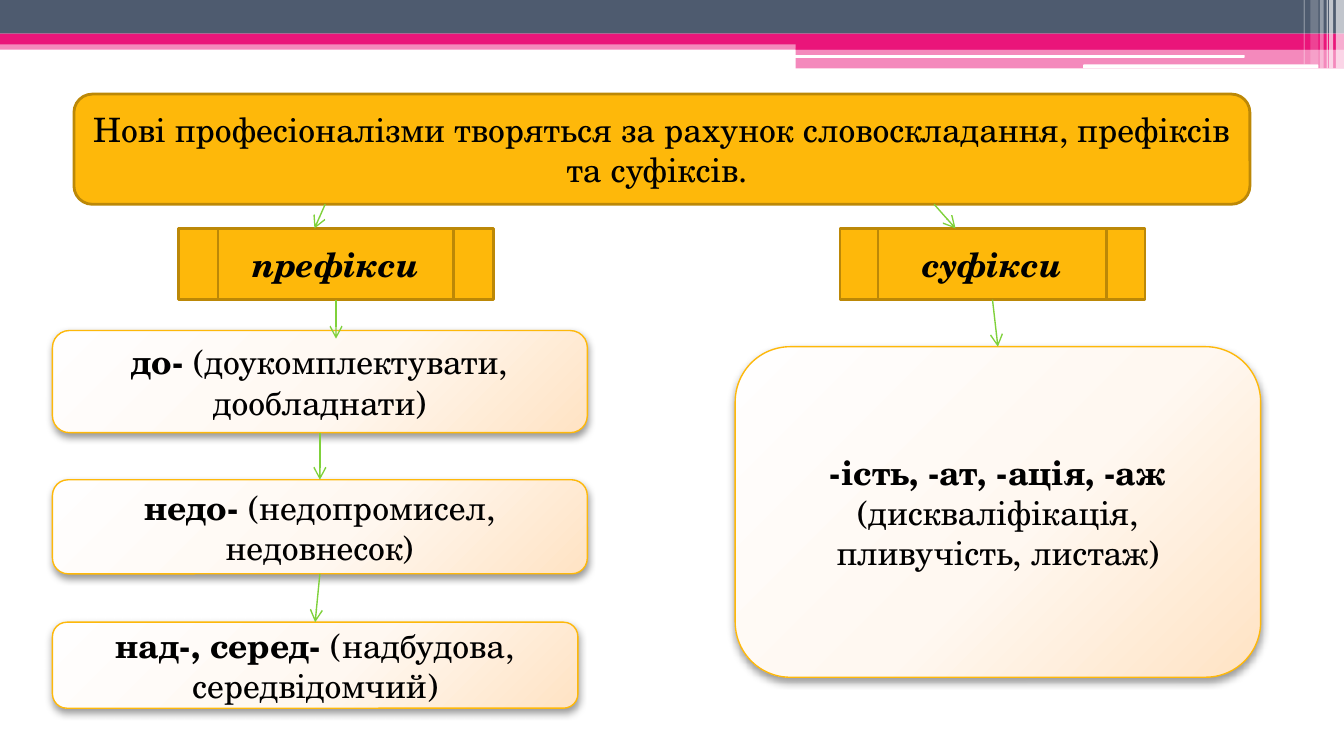
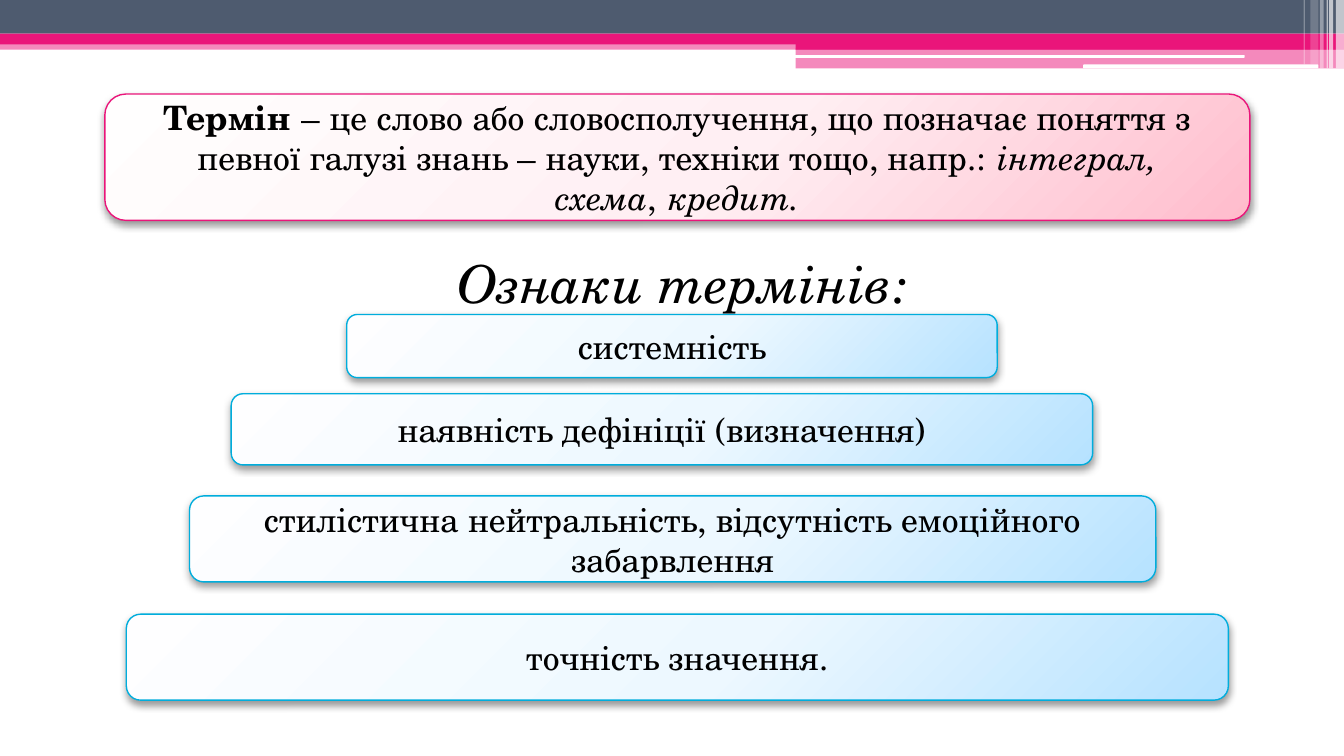
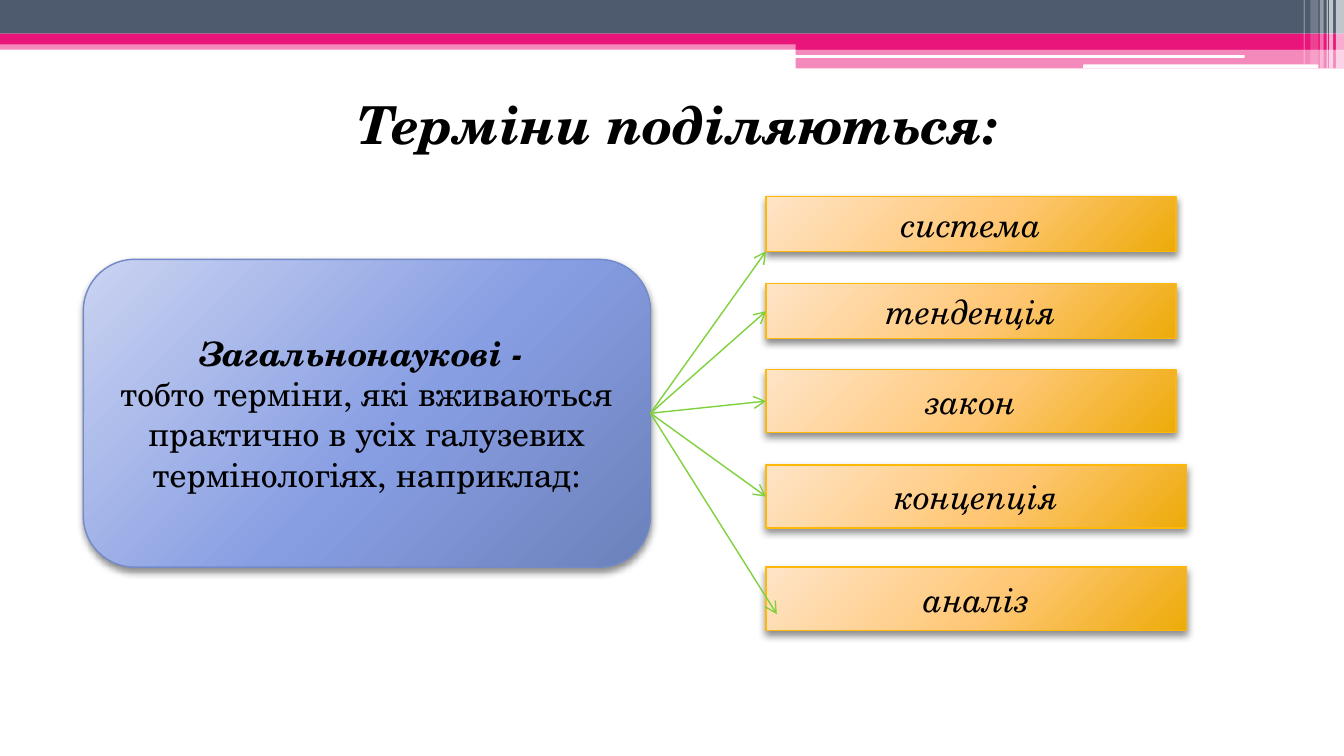
"""Build three slides on professional words and terms."""
from dataclasses import dataclass

from lxml.etree import SubElement
from pptx import Presentation
from pptx.dml.color import RGBColor
from pptx.enum.shapes import MSO_CONNECTOR, MSO_SHAPE
from pptx.enum.text import MSO_ANCHOR, MSO_AUTO_SIZE, PP_ALIGN
from pptx.oxml import parse_xml
from pptx.oxml.ns import nsdecls, qn
from pptx.util import Inches, Pt


@dataclass(frozen=True)
class Tone:
    """Fill stops, edge and shadow of one kind of box."""
    stops: tuple
    edge: str
    width: float = 0.75
    shade: int = 40
    blur: float = 4.1


@dataclass(frozen=True)
class Theme:
    """Colours, tones and type sizes of the deck."""
    font: str = "TeX Gyre Schola"
    body: int = 18
    head: int = 28
    ink: str = "000000"
    slate: str = "4E5B6F"
    pink: str = "EA157A"
    white: str = "FFFFFF"
    arrow: str = "7FD13B"
    thin: float = 0.75
    gold: Tone = Tone(("FEB80A",), "BC8807", 1.5, 0)
    cream: Tone = Tone(("FFFEFE", "FFF8F1", "FFE3C4"), "FEB80A")
    rose: Tone = Tone(("FFFEFE", "FFEFF3", "FFBCCC"), "EA157A")
    sky: Tone = Tone(("FEFEFF", "EDF8FF", "B6E2FF"), "00ADDC")
    blue: Tone = Tone(("CAD3F1", "889EE3", "6B81BA"), "738AC8", shade=45, blur=4)
    amber: Tone = Tone(("FFE4C7", "FFC775", "EDAB09"), "FEB80A", shade=45, blur=4)


THEME = Theme()
ROUND = MSO_SHAPE.ROUNDED_RECTANGLE
RECT = MSO_SHAPE.RECTANGLE
PANEL = MSO_SHAPE.FLOWCHART_PREDEFINED_PROCESS
TOP, LEFT, BOTTOM, RIGHT = range(4)
HARD = chr(160)


def style(item, **values):
    """Set every given format value on an item."""
    for name, value in values.items():
        setattr(item, name, value)


def paint(shape, color, alpha=100):
    """Give a shape a solid fill, clear in part if asked."""
    shape.fill.solid()
    shape.fill.fore_color.rgb = RGBColor.from_string(color)
    if alpha < 100:
        node = shape.element.spPr.find(".//" + qn("a:srgbClr"))
        SubElement(node, qn("a:alpha"), val=str(alpha * 1000))


def blend(shape, stops):
    """Give a shape a three-stop radial gradient."""
    marks = "".join(
        f'<a:gs pos="{at * 1000}"><a:srgbClr val="{color}"/></a:gs>'
        for at, color in zip((0, 55, 100), stops))
    shape.fill.background()
    props = shape.element.spPr
    props.replace(props.find(qn("a:noFill")), parse_xml(
        f'<a:gradFill {nsdecls("a")} rotWithShape="1"><a:gsLst>{marks}</a:gsLst>'
        '<a:path path="circle"><a:fillToRect l="-40000" t="-90000" '
        'r="140000" b="190000"/></a:path></a:gradFill>'))


def shade(shape, tone):
    """Drop a soft shadow straight below a shape."""
    glow = SubElement(
        shape.element.spPr.find(qn("a:effectLst")), qn("a:outerShdw"),
        blurRad=str(Pt(tone.blur)), dist=str(Pt(2)), dir="5400000", rotWithShape="0")
    color = SubElement(glow, qn("a:srgbClr"), val=THEME.ink)
    SubElement(color, qn("a:alpha"), val=str(tone.shade * 1000))


def write(frame, paras, size):
    """Fill a frame with centred paragraphs of (text, marks) runs."""
    frame.word_wrap = True
    for index, runs in enumerate(paras):
        para = frame.add_paragraph() if index else frame.paragraphs[0]
        para.alignment = PP_ALIGN.CENTER
        for text, marks in runs:
            run = para.add_run()
            run.text = text
            style(run.font, name=THEME.font, size=Pt(size),
                  bold="b" in marks, italic="i" in marks)
            run.font.color.rgb = RGBColor.from_string(THEME.ink)


def box(slide, kind, place, tone, *paras):
    """Add a toned box with text."""
    shape = slide.shapes.add_shape(kind, *map(Inches, place))
    shape.shadow.inherit = False
    if len(tone.stops) > 1:
        blend(shape, tone.stops)
    else:
        paint(shape, *tone.stops)
    shape.line.color.rgb = RGBColor.from_string(tone.edge)
    shape.line.width = Pt(tone.width)
    if tone.shade:
        shade(shape, tone)
    shape.text_frame.vertical_anchor = MSO_ANCHOR.MIDDLE
    write(shape.text_frame, paras, THEME.body)
    return shape


def title(slide, place, text, marks):
    """Add a large heading."""
    frame = slide.shapes.add_textbox(*map(Inches, place)).text_frame
    write(frame, [[(text, marks)]], THEME.head)
    frame.auto_size = MSO_AUTO_SIZE.SHAPE_TO_FIT_TEXT


def spot(end):
    """Return the point of an end given as (x, y) or (shape, side)."""
    item, side = end
    if isinstance(item, (int, float)):
        return Inches(item), Inches(side)
    across = {LEFT: 0, RIGHT: item.width}.get(side, item.width // 2)
    down = {TOP: 0, BOTTOM: item.height}.get(side, item.height // 2)
    return item.left + across, item.top + down


def link(slide, start, end):
    """Draw an arrow, joined where an end names a shape."""
    line = slide.shapes.add_connector(MSO_CONNECTOR.STRAIGHT, *spot(start), *spot(end))
    for join, target in ((line.begin_connect, start), (line.end_connect, end)):
        if not isinstance(target[0], (int, float)):
            join(*target)
    line.line.color.rgb = RGBColor.from_string(THEME.arrow)
    line.line.width = Pt(THEME.thin)
    props = line.element.spPr
    SubElement(props.find(qn("a:ln")), qn("a:tailEnd"), type="arrow")
    SubElement(props, qn("a:effectLst"))


def banner(slide):
    """Build the top band and move it to the shared layout."""
    layout = slide.slide_layout
    for holder in list(layout.placeholders):
        holder.element.getparent().remove(holder.element)
    bands = [
        (RECT, (0, 0.3, 10, 0.07), THEME.pink, 50),
        (RECT, (0, 0, 10, 0.25), THEME.slate, 100),
        (RECT, (0, 0.25, 10, 0.08), THEME.pink, 100),
        (RECT, (5.92, 0.3, 4.08, 0.07), THEME.pink, 100),
        (RECT, (5.92, 0.36, 4.08, 0.15), THEME.pink, 50),
        (ROUND, (5.91, 0.41, 3.35, 0.02), THEME.white, 100),
        (ROUND, (8.06, 0.48, 1.75, 0.03), THEME.white, 100),
    ]
    strips = [(9.94, 0.06, 0.51, 65), (9.89, 0.03, 0.51, 65), (9.87, 0.01, 0.51, 60),
              (9.82, 0.03, 0.51, 40), (9.75, 0.06, 0.48, 20), (9.7, 0.01, 0.48, 30)]
    bands += [(RECT, (left, 0, width, height), THEME.white, alpha)
              for left, width, height, alpha in strips]
    made = []
    for kind, place, color, alpha in bands:
        shape = slide.shapes.add_shape(kind, *map(Inches, place))
        shape.shadow.inherit = False
        shape.line.fill.background()
        paint(shape, color, alpha)
        made.append(shape)
    for shape in made:
        layout.shapes.element.append(shape.element)


def affix(slide):
    """Show the prefixes and suffixes that form new words."""
    box(slide, ROUND, (0.55, 0.7, 8.75, 0.82), THEME.gold,
        [("Нові професіоналізми творяться за рахунок словоскладання, "
          "префіксів та суфіксів. ", "")])
    prefix = box(slide, PANEL, (1.33, 1.7, 2.34, 0.53), THEME.gold, [("префікси", "bi")])
    suffix = box(slide, PANEL, (6.25, 1.7, 2.27, 0.53), THEME.gold, [("суфікси", "bi")])
    rows = [
        ((0.39, 2.46, 3.98, 0.76), "до- ", "(доукомплектувати, дообладнати)"),
        ((0.39, 3.57, 3.98, 0.7), "недо-", " (недопромисел, недовнесок)"),
        ((0.39, 4.63, 3.91, 0.64), "над-, серед- ", "(надбудова, середвідомчий)"),
        ((5.47, 2.58, 3.91, 2.46), "-ість, -ат, -ація, -аж ",
         "(дискваліфікація, пливучість, листаж)"),
    ]
    first, second, third, last = [
        box(slide, ROUND, place, THEME.cream, [(part, "b"), (words, "")])
        for place, part, words in rows]
    for start, end in [
            ((2.42, 1.52), (2.34, 1.7)),
            ((6.95, 1.52), (7.11, 1.7)),
            ((prefix, BOTTOM), (2.5, 2.52)),
            ((first, BOTTOM), (second, TOP)),
            ((second, BOTTOM), (third, TOP)),
            ((suffix, BOTTOM), (last, TOP))]:
        link(slide, start, end)


def traits(slide):
    """Define a term and list its features."""
    box(slide, ROUND, (0.78, 0.7, 8.52, 0.94), THEME.rose,
        [("Термін" + HARD, "b"),
         ("– це слово або словосполучення, що позначає поняття з певної галузі "
          "знань – науки, техніки тощо, напр.:" + HARD, ""),
         ("інтеграл, схема", "i"), ("," + HARD, ""), ("кредит.", "i")])
    title(slide, (1.17, 1.82, 7.81, 0.57), "Ознаки термінів:", "i")
    for place, text in [
            ((2.58, 2.34, 4.84, 0.47), "системність"),
            ((1.72, 2.93, 6.41, 0.53), "наявність дефініції (визначення)"),
            ((1.41, 3.69, 7.19, 0.64),
             "стилістична нейтральність, відсутність емоційного забарвлення"),
            ((0.94, 4.57, 8.2, 0.64), "точність значення.")]:
        box(slide, ROUND, place, THEME.sky, [(text, "")])


def groups(slide):
    """Show general scientific terms with samples."""
    title(slide, (1.02, 0.64, 8.05, 0.57), "Терміни поділяються:", "bi")
    hub = box(slide, ROUND, (0.62, 1.93, 4.22, 2.29), THEME.blue,
              [("Загальнонаукові - ", "bi")],
              [("тобто терміни, які вживаються практично в усіх галузевих "
                "термінологіях, наприклад:", "")])
    rows = [("система", 1.46, 3.05, 0.41), ("тенденція", 2.11, 3.05, 0.41),
            ("закон", 2.75, 3.05, 0.47), ("концепція", 3.46, 3.13, 0.47),
            ("аналіз", 4.22, 3.13, 0.47)]
    terms = [box(slide, RECT, (5.7, top, width, height), THEME.amber, [(text, "i")])
             for text, top, width, height in rows]
    ends = [(5.7, 1.87), *((term, LEFT) for term in terms[1:4]), (5.78, 4.57)]
    for end in ends:
        link(slide, (hub, RIGHT), end)


def main():
    """Build and save the deck."""
    deck = Presentation()
    style(deck, slide_width=Inches(10), slide_height=Inches(10) * 9 // 16)
    blank = deck.slide_layouts[6]
    for index, fill in enumerate((affix, traits, groups)):
        slide = deck.slides.add_slide(blank)
        if index == 0:
            banner(slide)
        fill(slide)
    deck.save("out.pptx")


if __name__ == "__main__":
    main()
